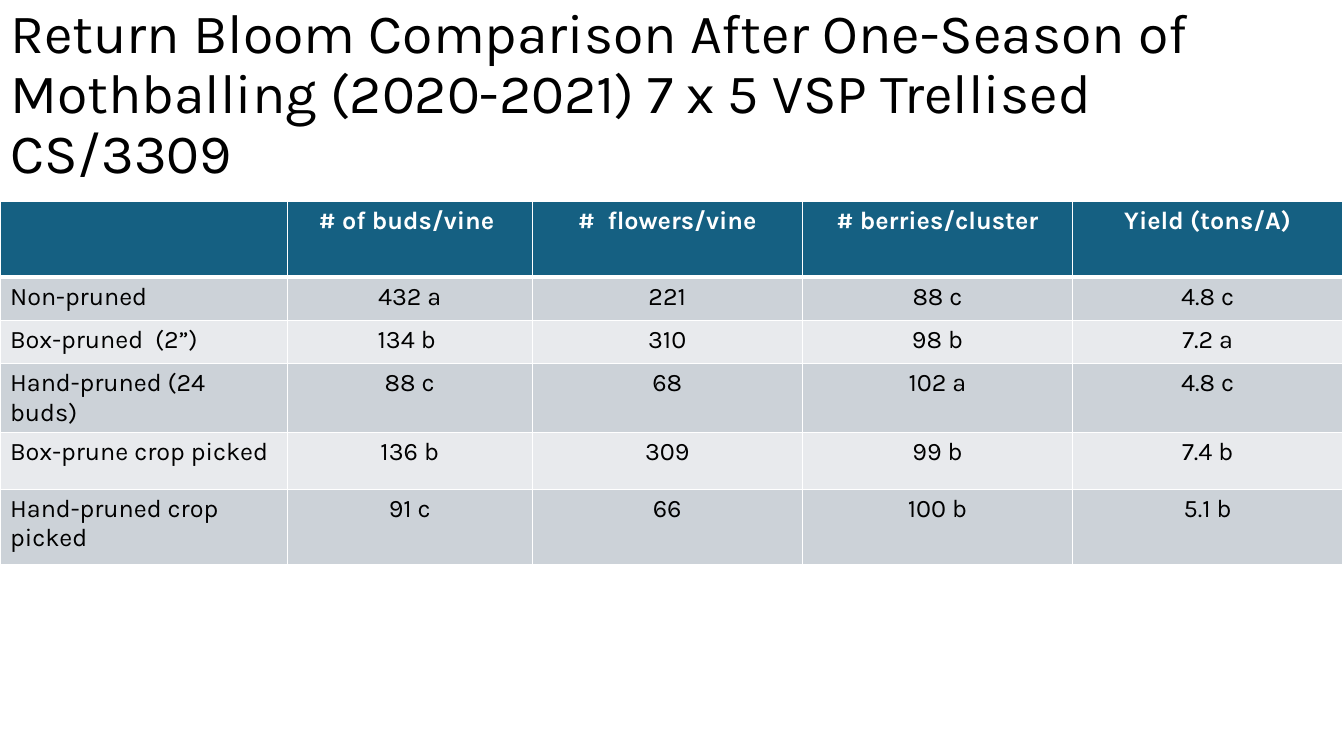
from lxml import etree
from pptx import Presentation
from pptx import util as u
from pptx.dml.color import RGBColor
from pptx.enum import text
from pptx.oxml.ns import qn

FONT = "Karla"
WHITE, BLACK, TEAL, GREY, PALE = "FFFFFF", "000000", "156082", "CCD2D8", "E8EAED"
COLUMN_WIDTHS = [7.24, 6.17] + [6.81] * 3
ROW_HEIGHTS = [1.9, 1.09, 1.09, 1.09, 1.42, 1.9]
BLOOM_ROWS = [
    ["", "# of buds/vine ", "#  flowers/vine", "# berries/cluster", "Yield (tons/A)"],
    ["Non-pruned", "432 a", "221", "88 c", "4.8 c"],
    ["Box-pruned  (2”)", "134 b ", "310", "98 b", "7.2 a"],
    ["Hand-pruned (24 buds)", "88 c", "68", "102 a", "4.8 c"],
    ["Box-prune crop picked", "136 b", "309", "99 b", "7.4 b"],
    ["Hand-pruned crop picked", "91 c", "66", "100 b", "5.1 b"],
]


def paint(target, value):
    if hasattr(target, "solid"):
        target.solid()
        target = target.fore_color
    target.rgb = RGBColor.from_string(value)


def write(frame, words, size=18, color=BLACK, bold=False, align="LEFT", spacing=1.0):
    para = frame.paragraphs[0]
    para.alignment = getattr(text.PP_ALIGN, align)
    para.line_spacing = spacing
    span = para.add_run()
    span.text = words
    span.font.name, span.font.size, span.font.bold = FONT, u.Pt(size), bold
    paint(span.font.color, color)


def add_borders(cell, bottom):
    properties = cell._tc.get_or_add_tcPr()
    widths = {"a:lnL": 1, "a:lnR": 1, "a:lnT": 1, "a:lnB": bottom}
    for position, (side, width) in enumerate(widths.items()):
        line = etree.Element(qn(side), w=str(u.Pt(width)))
        fill = etree.SubElement(line, qn("a:solidFill"))
        etree.SubElement(fill, qn("a:srgbClr"), val=WHITE)
        properties.insert(position, line)


def place_title(page, left, top, width, height):
    title = page.shapes.title
    title.left, title.top = u.Cm(left), u.Cm(top)
    title.width, title.height = u.Cm(width), u.Cm(height)
    frame = title.text_frame
    frame.word_wrap = True
    frame.auto_size = text.MSO_AUTO_SIZE.NONE
    frame.vertical_anchor = text.MSO_ANCHOR.MIDDLE
    write(frame, "Return Bloom Comparison After One-Season of Mothballing "
          "(2020-2021) 7 x 5 VSP Trellised CS/3309", size=39.6, spacing=0.9)


def place_bloom_table(page, left, top):
    table = page.shapes.add_table(
        len(ROW_HEIGHTS), len(COLUMN_WIDTHS), u.Cm(left), u.Cm(top),
        u.Cm(sum(COLUMN_WIDTHS)), u.Cm(sum(ROW_HEIGHTS))).table
    for column, width in zip(table.columns, COLUMN_WIDTHS):
        column.width = u.Cm(width)
    for index, (row, height) in enumerate(zip(table.rows, ROW_HEIGHTS)):
        row.height = u.Cm(height)
        header = index == 0
        shade = TEAL if header else GREY if index % 2 else PALE
        for place, (cell, words) in enumerate(zip(row.cells, BLOOM_ROWS[index])):
            paint(cell.fill, shade)
            add_borders(cell, bottom=3 if header else 1)
            if words:
                write(cell.text_frame, words, color=WHITE if header else BLACK,
                      bold=header, align="CENTER" if place else "LEFT")


def main():
    deck = Presentation()
    deck.slide_width, deck.slide_height = u.Cm(33.87), u.Cm(19.05)
    page = deck.slides.add_slide(deck.slide_layouts[5])
    paint(page.background.fill, WHITE)
    place_title(page, 0, 0.56, 31.55, 3.68)
    place_bloom_table(page, 0, 5.08)
    deck.save("out.pptx")


if __name__ == "__main__":
    main()
